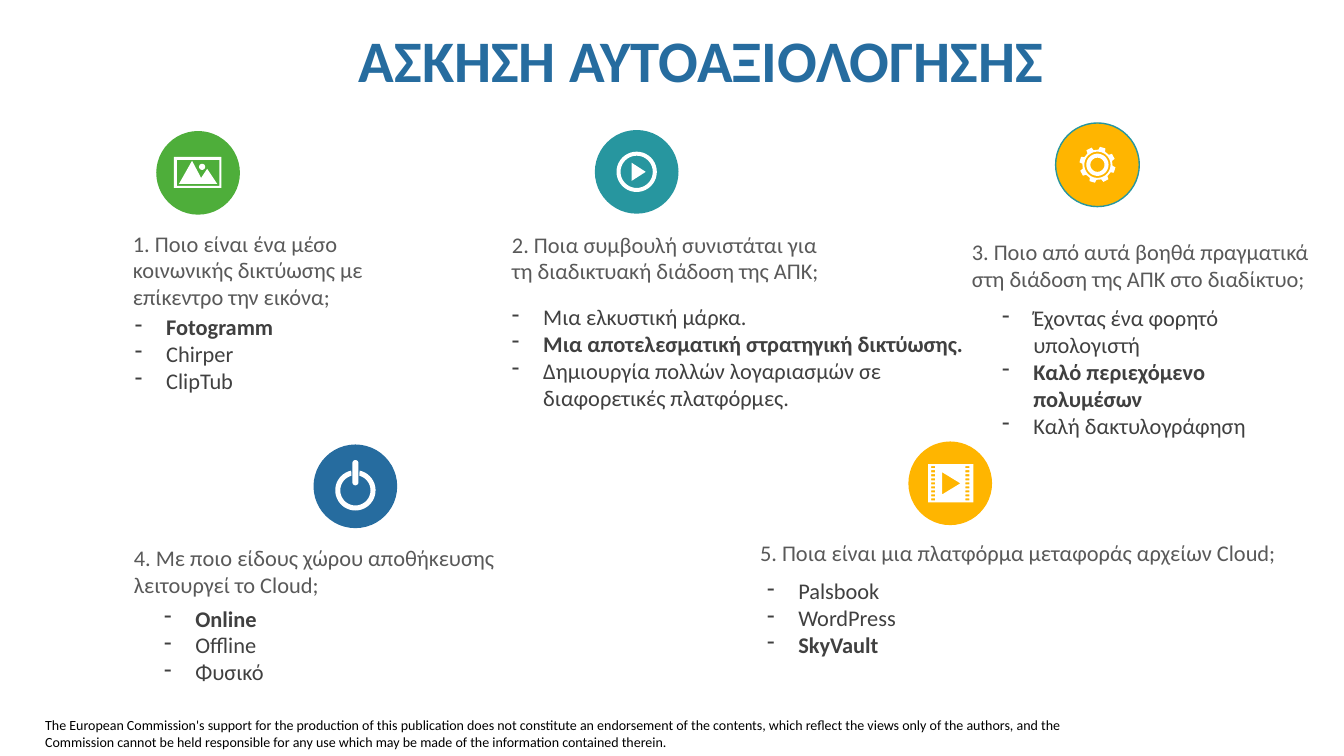
from math import cos, radians, sin

from pptx import Presentation
from pptx.dml.color import RGBColor
from pptx.enum.shapes import MSO_SHAPE
from pptx.enum.text import MSO_ANCHOR, MSO_AUTO_SIZE, PP_ALIGN
from pptx.oxml.ns import qn
from pptx.util import Inches, Pt

ELLIPSE = MSO_SHAPE.OVAL
LEFT = PP_ALIGN.LEFT
MIDDLE, TOP = MSO_ANCHOR.MIDDLE, MSO_ANCHOR.TOP
NO_FIT, GROW = MSO_AUTO_SIZE.NONE, MSO_AUTO_SIZE.SHAPE_TO_FIT_TEXT

BLUE, TEAL, GREEN, YELLOW = "266C9F", "27969F", "4EAE3A", "FFB500"
WHITE, BLACK, GREY, DARK = "FFFFFF", "000000", "595959", "404040"


def color(value):
    return RGBColor.from_string(value)


def write(paragraph, text, size=16, ink=DARK, bold=False, spacing=None, bullet=None):
    paragraph.alignment = LEFT
    if spacing:
        paragraph.line_spacing = spacing
    if bullet:
        properties = paragraph._p.get_or_add_pPr()
        properties.set("marL", str(Inches(0.31)))
        properties.set("indent", str(-Inches(0.31)))
        mark = properties.makeelement(qn("a:buChar"), {"char": bullet})
        properties.append(mark)
    run = paragraph.add_run()
    run.text = text
    run.font.name = "Calibri"
    run.font.size = Pt(size)
    run.font.bold = bold
    run.font.color.rgb = color(ink)


def arc(x, y, radius, start=0, end=360, steps=40):
    angles = [radians(start + (end - start) * i / steps) for i in range(steps + 1)]
    return [(x + radius * cos(a), y + radius * sin(a)) for a in angles]


def box(left, top, width, height):
    right, bottom = left + width, top + height
    return [(left, top), (right, top), (right, bottom), (left, bottom)]


def picture_icon(x, y):
    mountains = [(-0.06, -0.12), (0.03, 0.05), (0.09, -0.04), (0.19, 0.11), (-0.19, 0.11)]
    return [
        box(x - 0.24, y - 0.16, 0.47, 0.31),
        box(x - 0.21, y - 0.13, 0.42, 0.26),
        [(x + dx, y + dy) for dx, dy in mountains],
        arc(x + 0.04, y - 0.06, 0.03),
    ]


def play_icon(x, y):
    triangle = [(x - 0.05, y - 0.09), (x + 0.09, y), (x - 0.05, y + 0.09)]
    return [arc(x, y, 0.2), arc(x, y, 0.16), triangle]


def gear_icon(x, y):
    outline = []
    for tooth in range(8):
        middle = -28 + 45 * tooth
        for radius, offset in ((0.15, -13), (0.18, -9), (0.18, 9), (0.15, 13)):
            angle = radians(middle + offset)
            outline.append((x + radius * cos(angle), y + radius * sin(angle)))
    return [outline] + [arc(x, y, radius) for radius in (0.13, 0.11, 0.07)]


def power_icon(x, y):
    ring = arc(x, y + 0.04, 0.2, -78, 258) + arc(x, y + 0.04, 0.15, 255, -75)
    stem = arc(x, y - 0.23, 0.03, 180, 360) + arc(x, y - 0.04, 0.03, 0, 180)
    return [ring, stem]


def film_icon(x, y):
    holes = [
        box(x + side, y - 0.17 + 0.04 * row, 0.04, 0.02)
        for side in (-0.19, 0.15)
        for row in range(9)
    ]
    triangle = [(x - 0.08, y - 0.11), (x + 0.1, y), (x - 0.08, y + 0.11)]
    return [box(x - 0.22, y - 0.19, 0.45, 0.38), triangle] + holes


class QuizSlide:
    badge_size = 0.83

    def __init__(self, presentation):
        self.slide = presentation.slides.add_slide(presentation.slide_layouts[5])
        self.shapes = self.slide.shapes

    def title(self, text, left, top, width, height):
        shape = self.shapes.title
        shape.left, shape.top = Inches(left), Inches(top)
        shape.width, shape.height = Inches(width), Inches(height)
        frame = shape.text_frame
        frame.word_wrap = True
        frame.auto_size = NO_FIT
        frame.vertical_anchor = MIDDLE
        write(frame.paragraphs[0], text, size=42, ink=BLUE, bold=True, spacing=0.9)

    def frame(self, left, top, width, height, fit=NO_FIT):
        shape = self.shapes.add_textbox(
            Inches(left), Inches(top), Inches(width), Inches(height))
        frame = shape.text_frame
        frame.word_wrap = True
        frame.auto_size = fit
        frame.vertical_anchor = TOP
        return frame

    def question(self, text, left, top, width):
        write(self.frame(left, top, width, 0.3).paragraphs[0], text, ink=GREY)

    def answers(self, options, correct, left, top, width):
        frame = self.frame(left, top, width, 0.91)
        for index, option in enumerate(options):
            paragraph = frame.add_paragraph() if index else frame.paragraphs[0]
            write(paragraph, option, bold=index == correct, bullet="-")

    def footer(self, text, left, top, width, height):
        frame = self.frame(left, top, width, height, fit=GROW)
        write(frame.paragraphs[0], text, size=10, ink=BLACK)

    def badge(self, icon, left, top, fill, line=None):
        size = self.badge_size
        circle = self.shapes.add_shape(
            ELLIPSE, Inches(left), Inches(top), Inches(size), Inches(size))
        self.paint(circle, fill, line)
        self.outline(icon(left + size / 2, top + size / 2))

    def outline(self, contours):
        points = [[(Inches(x), Inches(y)) for x, y in contour] for contour in contours]
        builder = self.shapes.build_freeform(*points[0][0])
        builder.add_line_segments(points[0][1:])
        for contour in points[1:]:
            builder.move_to(*contour[0])
            builder.add_line_segments(contour[1:])
        self.paint(builder.convert_to_shape(), WHITE)

    def paint(self, shape, fill, line=None):
        shape.shadow.inherit = False
        shape.fill.solid()
        shape.fill.fore_color.rgb = color(fill)
        if line:
            shape.line.color.rgb = color(line)
            shape.line.width = Pt(1)
        else:
            shape.line.fill.background()


QUESTIONS = [
    (("1. Ποιο είναι ένα μέσο κοινωνικής δικτύωσης με επίκεντρο την εικόνα;", 1.22, 2.23, 3.13),
     (["Fotogramm", "Chirper", "ClipTub"], 0, 1.24, 3.06, 2.4),
     (picture_icon, 1.55, 1.3, GREEN)),
    (("2. Ποια συμβουλή συνιστάται για τη διαδικτυακή διάδοση της ΑΠΚ;", 4.98, 2.24, 3.26),
     (["Μια ελκυστική μάρκα.", "Μια αποτελεσματική στρατηγική δικτύωσης.",
       "Δημιουργία πολλών λογαριασμών σε διαφορετικές πλατφόρμες."], 1, 4.98, 2.96, 4.76),
     (play_icon, 5.9, 1.29, TEAL)),
    (("3. Ποιο από αυτά βοηθά πραγματικά στη διάδοση της ΑΠΚ στο διαδίκτυο;", 9.54, 2.31, 3.57),
     (["Έχοντας ένα φορητό υπολογιστή", "Καλό περιεχόμενο πολυμέσων",
       "Καλή δακτυλογράφηση"], 1, 9.84, 2.97, 3.27),
     (gear_icon, 10.47, 1.22, YELLOW, TEAL)),
    (("4. Με ποιο είδους χώρου αποθήκευσης λειτουργεί το Cloud;", 1.23, 5.35, 4.03),
     (["Online", "Offline", "Φυσικό"], 0, 1.53, 5.95, 2.4),
     (power_icon, 3.11, 4.41, BLUE)),
    (("5. Ποια είναι μια πλατφόρμα μεταφοράς αρχείων Cloud;", 7.44, 5.3, 5.35),
     (["Palsbook", "WordPress", "SkyVault"], 2, 7.51, 5.68, 2.4),
     (film_icon, 9.01, 4.38, YELLOW)),
]


def main():
    presentation = Presentation()
    presentation.slide_width, presentation.slide_height = Inches(13.33), Inches(7.5)
    quiz = QuizSlide(presentation)
    quiz.title("ΑΣΚΗΣΗ ΑΥΤΟΑΞΙΟΛΟΓΗΣΗΣ", 3.46, 0.23, 7.6, 0.79)
    for question, answers, badge in QUESTIONS:
        quiz.question(*question)
        quiz.answers(*answers)
        quiz.badge(*badge)
    quiz.footer(
        "The European Commission's support for the production of this publication does not "
        "constitute an endorsement of the contents, which reflect the views only of the "
        "authors, and the Commission cannot be held responsible for any use which may be "
        "made of the information contained therein.", 0.35, 7.06, 10.46, 0.44)
    presentation.save("out.pptx")


if __name__ == "__main__":
    main()
